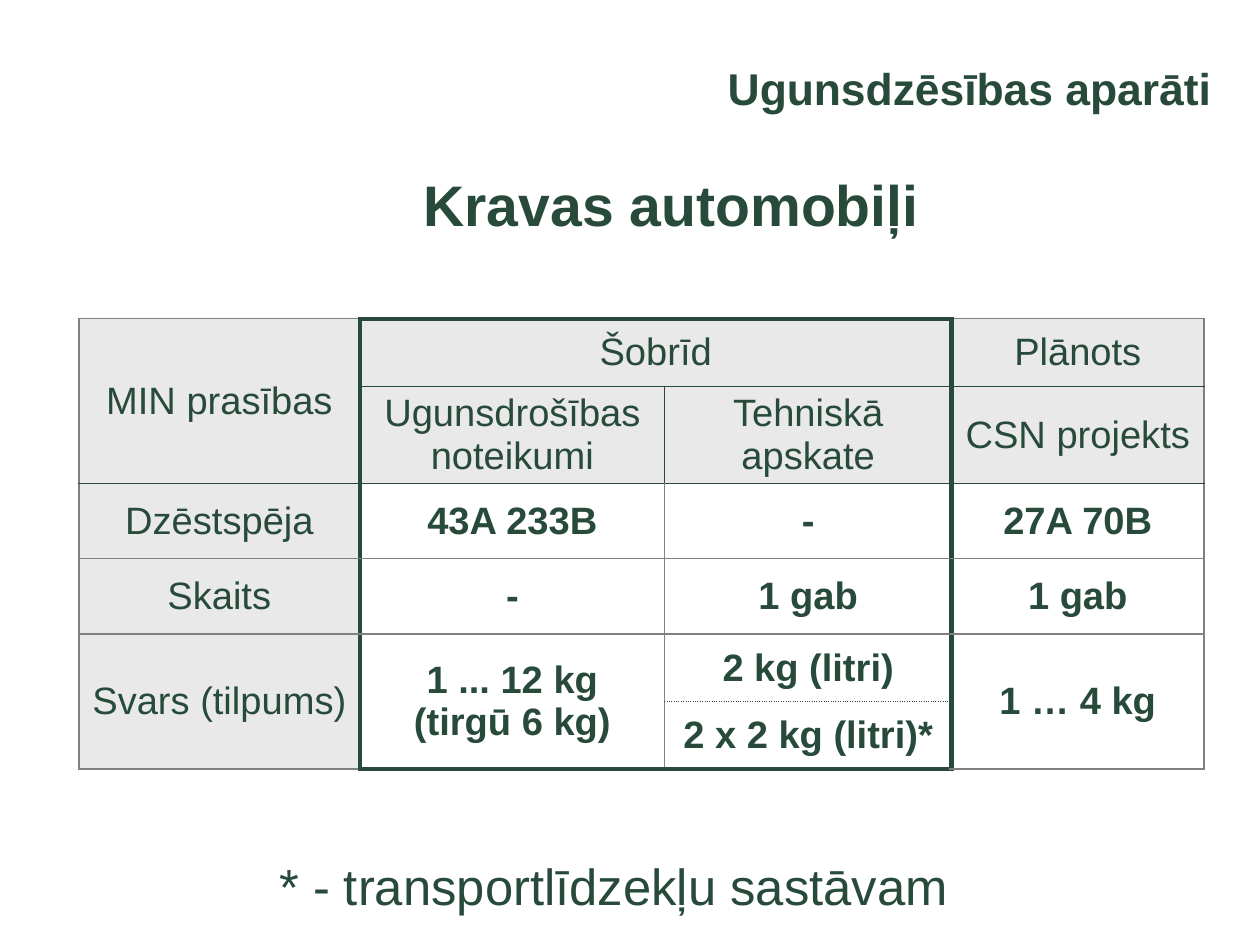
"""Build the slide on fire extinguisher requirements for trucks."""
from lxml import etree
from pptx import Presentation
from pptx.dml.color import RGBColor
from pptx.enum.text import MSO_ANCHOR, MSO_AUTO_SIZE, PP_ALIGN
from pptx.oxml.ns import qn
from pptx.util import Pt

MIDDLE, NO_FIT = MSO_ANCHOR.MIDDLE, MSO_AUTO_SIZE.NONE
CENTER, RIGHT = PP_ALIGN.CENTER, PP_ALIGN.RIGHT
PX = 9144
THEME = {
    "font": "Arial", "green": "284A3A", "gray": "808080",
    "label": "E8E9E8", "value": "FFFFFF",
    "topic": 28, "heading": 36, "table": 24, "footnote": 32,
}


def write(frame, text, size, bold=False, align=CENTER):
    """Fill a text frame with one paragraph per line of text."""
    frame.word_wrap = True
    frame.vertical_anchor = MIDDLE
    for index, line in enumerate(text.split("\n")):
        paragraph = frame.add_paragraph() if index else frame.paragraphs[0]
        paragraph.alignment = align
        paragraph.space_before = Pt(0)
        run = paragraph.add_run()
        run.text = line
        run.font.name = THEME["font"]
        run.font.size = Pt(THEME[size])
        run.font.bold = bold
        run.font.color.rgb = RGBColor.from_string(THEME["green"])


def draw_border(cell, side, position, edge):
    """Set one border of a cell from a (colour, points, dash) edge."""
    line = etree.Element(qn(f"a:ln{side}"))
    if edge:
        color, points, dash = edge
        line.set("w", str(Pt(points)))
        fill = etree.SubElement(line, qn("a:solidFill"))
        etree.SubElement(fill, qn("a:srgbClr"), val=THEME[color])
        etree.SubElement(line, qn("a:prstDash"), val=dash)
    else:
        etree.SubElement(line, qn("a:noFill"))
    cell._tc.get_or_add_tcPr().insert(position, line)


prs = Presentation()
prs.slide_width, prs.slide_height = 1103 * PX, 827 * PX
slide = prs.slides.add_slide(prs.slide_layouts[5])

topic = slide.shapes.title
heading = slide.shapes.add_textbox(0, 0, PX, PX)
footnote = slide.shapes.add_textbox(0, 0, PX, PX)
for part, box, text, size, bold, align in (
    (topic, (214, 38, 857, 77), "Ugunsdzēsības aparāti", "topic", True, RIGHT),
    (heading, (104, 132, 967, 92), "Kravas automobiļi", "heading", True, CENTER),
    (footnote, (69, 745, 937, 60), "* - transportlīdzekļu sastāvam", "footnote", False, CENTER),
):
    part.left, part.top, part.width, part.height = [length * PX for length in box]
    part.text_frame.auto_size = NO_FIT
    part.text_frame.margin_left = part.text_frame.margin_right = 11 * PX
    write(part.text_frame, text, size, bold, align)

REQUIREMENTS = [
    ["MIN prasības", "Šobrīd", "", "Plānots"],
    ["", "Ugunsdrošības noteikumi", "Tehniskā apskate", "CSN projekts"],
    ["Dzēstspēja", "43A 233B", "-", "27A 70B"],
    ["Skaits", "-", "1 gab", "1 gab"],
    ["Svars (tilpums)", "1 ... 12 kg\n(tirgū 6 kg)", "2 kg (litri)", "1 … 4 kg"],
    ["", "", "2 x 2 kg (litri)*", ""],
]
COLUMN_WIDTHS = [246, 267, 251, 221]
ROW_HEIGHTS = [59, 85, 66, 66, 59, 59]
MERGES = [((0, 0), (1, 0)), ((0, 1), (0, 2))] + [((4, col), (5, col)) for col in (0, 1, 3)]

table = slide.shapes.add_table(
    len(ROW_HEIGHTS), len(COLUMN_WIDTHS), 69 * PX, 279 * PX,
    sum(COLUMN_WIDTHS) * PX, sum(ROW_HEIGHTS) * PX,
).table
table.first_row = table.horz_banding = False
for column, width in zip(table.columns, COLUMN_WIDTHS):
    column.width = width * PX
for row, height in zip(table.rows, ROW_HEIGHTS):
    row.height = height * PX
for first, last in MERGES:
    table.cell(*first).merge(table.cell(*last))

THIN, RULE = ("gray", 1, "solid"), ("green", 1, "solid")
FRAME, DOTTED = ("green", 3, "solid"), ("green", 1, "sysDot")
across = [
    [THIN, FRAME, FRAME, THIN],
    [None, RULE, RULE, RULE],
    [RULE] * 4,
    [THIN] * 4,
    [THIN] * 4,
    [None, None, DOTTED, None],
    [THIN, FRAME, FRAME, THIN],
]
down = [[THIN, FRAME, middle, FRAME, THIN] for middle in [None, RULE] + [THIN] * 4]

for r, texts in enumerate(REQUIREMENTS):
    for c, text in enumerate(texts):
        cell = table.cell(r, c)
        is_label = r < 2 or c == 0
        cell.fill.solid()
        cell.fill.fore_color.rgb = RGBColor.from_string(THEME["label" if is_label else "value"])
        rows, cols = (cell.span_height, cell.span_width) if cell.is_merge_origin else (1, 1)
        edges = (("L", down[r][c]), ("R", down[r][c + cols]),
                 ("T", across[r][c]), ("B", across[r + rows][c]))
        for position, (side, edge) in enumerate(edges):
            draw_border(cell, side, position, edge)
        if text:
            write(cell.text_frame, text, "table", not is_label)
            cell.vertical_anchor = MIDDLE

prs.save("out.pptx")
